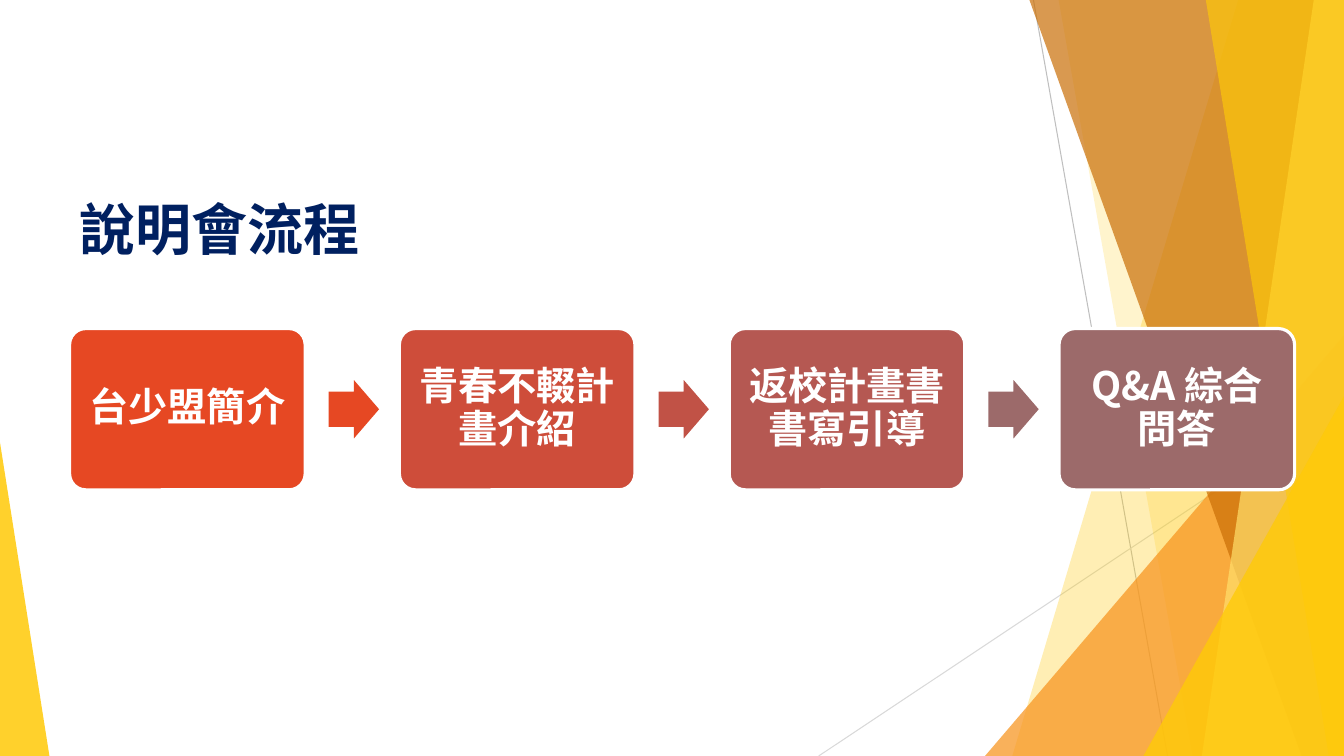
from lxml.etree import SubElement
from pptx import Presentation
from pptx.dml.color import RGBColor
from pptx.enum.shapes import MSO_CONNECTOR, MSO_SHAPE as Preset
from pptx.enum.text import MSO_ANCHOR as Anchor, PP_ALIGN as Align
from pptx.oxml.ns import qn
from pptx.util import Inches, Pt

WIDTH, HEIGHT = 13.33, 7.5
FONT = "Noto Sans CJK SC"
COLORS = {
    "white": "FFFFFF", "navy": "002060", "gold": "FFCA08", "orange": "F8931D",
    "brown": "CA6F06", "pale": "FFDF6B", "gray": "BFBFBF", "light gray": "D9D9D9",
    "step 1": "E64823", "step 2": "CE4D3A", "step 3": "B55852", "step 4": "9C6A6A",
    "arrow 1": "E64823", "arrow 2": "C15246", "arrow 3": "9C6A6A",
}
STEPS = ["台少盟簡介", "青春不輟計畫介紹", "返校計畫書書寫引導", "Q&A 綜合問答"]
RAYS = [("gray", (10.25, 0), (11.58, HEIGHT)),
        ("light gray", (WIDTH, 4.03), (8.12, HEIGHT))]
BANDS = [(12.28, 10.04, "gold", 30), (10.5, 11.83, "gold", 20),
         (10.21, 12.91, "brown", 70), (13.03, 11.92, "pale", 70),
         (11.96, 13.18, "gold", 65)]


def rgb(name):
    """Look up a named colour."""
    return RGBColor.from_string(COLORS[name])


def paint(shape, color, opacity=100):
    """Fill a shape flat, with no line or shadow."""
    shape.shadow.inherit = False
    shape.fill.solid()
    shape.fill.fore_color.rgb = rgb(color)
    shape.line.fill.background()
    if opacity < 100:
        tint = shape._element.spPr.find(qn("a:solidFill"))[0]
        SubElement(tint, qn("a:alpha"), val=str(opacity * 1000))


def write(frame, text, size, color, align):
    """Write one bold, vertically centred paragraph."""
    frame.text = text
    frame.word_wrap = True
    frame.vertical_anchor = Anchor.MIDDLE
    paragraph = frame.paragraphs[0]
    paragraph.alignment = align
    font = paragraph.font
    font.size, font.bold, font.name = Pt(size), True, FONT
    font.color.rgb = rgb(color)
    SubElement(paragraph._p.pPr.find(qn("a:defRPr")), qn("a:ea"), typeface=FONT)
    return paragraph


def add_ray(slide, color, start, end):
    """Draw a thin line between two points."""
    ray = slide.shapes.add_connector(
        MSO_CONNECTOR.STRAIGHT, *map(Inches, start + end))
    ray.line.color.rgb = rgb(color)
    ray.line.width = Pt(0.75)
    SubElement(ray._element.spPr, qn("a:effectLst"))


def add_band(slide, top_x, bottom_x, color, opacity):
    """Fill the full-height area from a slanted edge to the right side."""
    corners = [(top_x, 0), (WIDTH, 0), (WIDTH, HEIGHT), (bottom_x, HEIGHT)]
    (first, *rest) = [(Inches(x), Inches(y)) for x, y in corners]
    outline = slide.shapes.build_freeform(*first)
    outline.add_line_segments(rest, close=True)
    paint(outline.convert_to_shape(), color, opacity)


def add_corner(slide, left, width, height, apex, color, opacity):
    """Place a right triangle on the bottom edge."""
    corner = slide.shapes.add_shape(
        Preset.ISOSCELES_TRIANGLE, Inches(left), Inches(HEIGHT - height),
        Inches(width), Inches(height))
    corner.adjustments[0] = apex
    paint(corner, color, opacity)


def add_facets(slide):
    """Decorate both sides of the slide with translucent facets."""
    for ray in RAYS:
        add_ray(slide, *ray)
    for band in BANDS[:2]:
        add_band(slide, *band)
    add_corner(slide, 9.77, 3.56, 4.17, 1, "orange", 72)
    for band in BANDS[2:]:
        add_band(slide, *band)
    add_corner(slide, 11.34, 1.99, 3.57, 1, "gold", 80)
    add_corner(slide, 0, 0.49, 3.11, 0, "gold", 85)


def add_title(slide, left, top, width, height):
    """Place the slide title in its box."""
    title = slide.shapes.title
    title.left, title.top = Inches(left), Inches(top)
    title.width, title.height = Inches(width), Inches(height)
    write(title.text_frame, "說明會流程", 40, "navy", Align.LEFT)


def add_step(slide, text, color, left, top, width, height):
    """Draw one rounded step with its label."""
    step = slide.shapes.add_shape(
        Preset.ROUNDED_RECTANGLE, *map(Inches, (left, top, width, height)))
    step.adjustments[0] = 0.1
    paint(step, color)
    step.line.color.rgb = rgb("white")
    step.line.width = Pt(2.25)
    frame = step.text_frame
    frame.margin_left = frame.margin_right = Inches(0.12)
    frame.margin_top = frame.margin_bottom = Inches(0.12)
    write(frame, text, 28, "white", Align.CENTER).line_spacing = 0.9


def add_arrow(slide, color, left, middle, width, height):
    """Draw a block arrow centred on a horizontal line."""
    arrow = slide.shapes.add_shape(
        Preset.RIGHT_ARROW, Inches(left), Inches(middle - height / 2),
        Inches(width), Inches(height))
    arrow.adjustments[0], arrow.adjustments[1] = 0.6, 0.5
    paint(arrow, color)


def add_process(slide, left, top, width, height):
    """Spread the steps over the box, with arrows in the gaps."""
    step_width = width / (len(STEPS) + 0.4 * (len(STEPS) - 1))
    pitch = 1.4 * step_width
    for index, text in enumerate(STEPS):
        number = index + 1
        x = left + index * pitch
        add_step(slide, text, f"step {number}", x, top, step_width, height)
        if number < len(STEPS):
            add_arrow(slide, f"arrow {number}", x + 1.1 * step_width,
                      top + height / 2, 0.5, 0.58)


def main():
    """Build and save the slide."""
    deck = Presentation()
    deck.slide_width, deck.slide_height = Inches(WIDTH), Inches(HEIGHT)
    slide = deck.slides.add_slide(deck.slide_layouts[5])
    add_facets(slide)
    add_title(slide, 0.69, 1.54, 10.53, 1.45)
    add_process(slide, 0.69, 3.26, 12.15, 1.6)
    deck.save("out.pptx")


if __name__ == "__main__":
    main()
